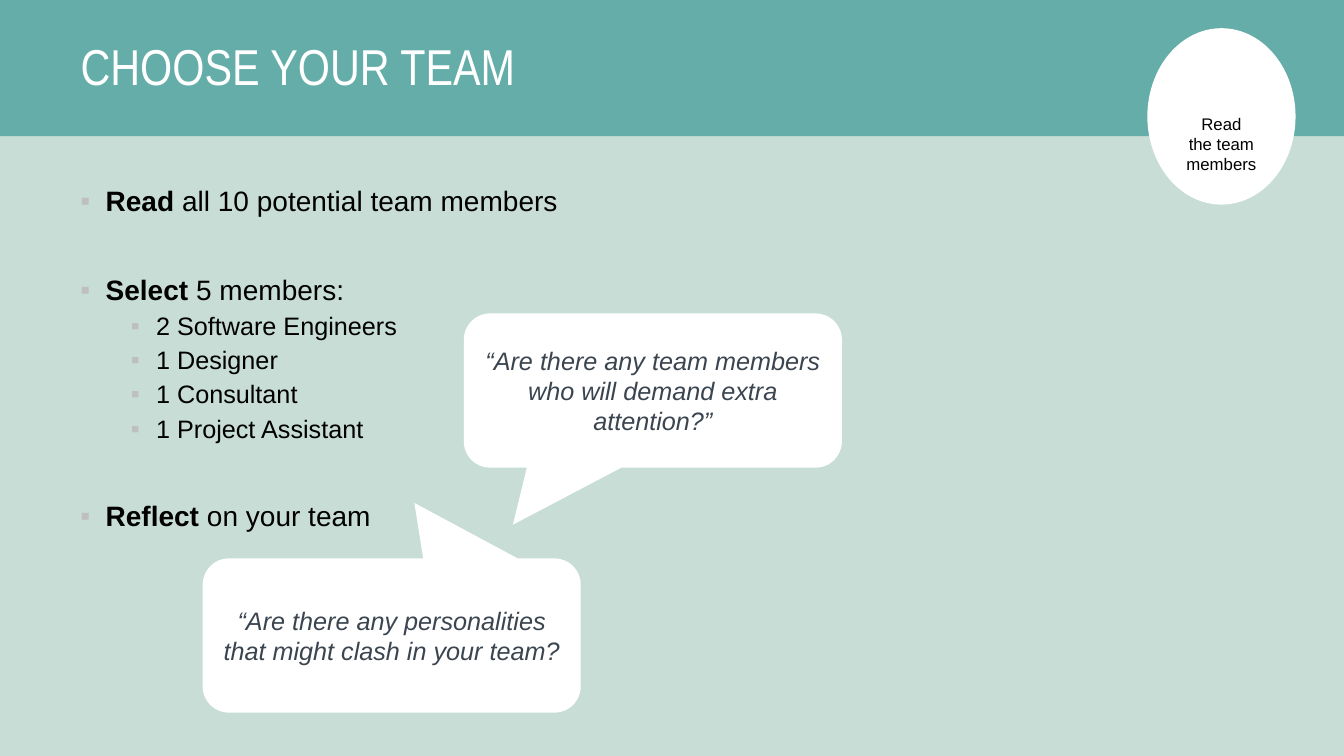
from dataclasses import dataclass
from typing import Any

from lxml import etree
from pptx import Presentation
from pptx.dml.color import RGBColor
from pptx.enum.shapes import MSO_SHAPE
from pptx.enum.text import MSO_ANCHOR, MSO_AUTO_SIZE, PP_ALIGN
from pptx.oxml.ns import qn
from pptx.util import Inches, Pt

RECTANGLE = MSO_SHAPE.RECTANGLE
OVAL = MSO_SHAPE.OVAL
CALLOUT = MSO_SHAPE.ROUNDED_RECTANGULAR_CALLOUT
MIDDLE, BOTTOM = MSO_ANCHOR.MIDDLE, MSO_ANCHOR.BOTTOM
LEFT, CENTER = PP_ALIGN.LEFT, PP_ALIGN.CENTER
NO_FIT = MSO_AUTO_SIZE.NONE
TITLE_ONLY = 5


@dataclass(frozen=True)
class Theme:
    background: str = "B6D4CD"
    panel: str = "C8DDD6"
    banner: str = "65ADA8"
    white: str = "FFFFFF"
    ink: str = "000000"
    quote: str = "3B4550"
    bullet: str = "BFBFBF"
    font: str = "Arial"
    title_font: str = "Arial Narrow"
    title_size: int = 36
    body_size: int = 20
    detail_size: int = 18
    badge_size: int = 12
    line_spacing: float = 0.9


@dataclass(frozen=True)
class Area:
    left: float
    top: float
    width: float
    height: float

    def lengths(self) -> tuple:
        return tuple(Inches(n) for n in (self.left, self.top, self.width, self.height))


@dataclass(frozen=True)
class Step:
    lead: str
    rest: str
    space_before: int = 0
    level: int = 0


@dataclass(frozen=True)
class Panel:
    kind: Any
    area: Area
    fill: str
    adjustments: tuple = ()
    text: str = ""
    size: int = 0
    color: str = ""
    italic: bool = False
    anchor: Any = MIDDLE


THEME = Theme()
SLIDE = Area(0, 0, 13.33, 7.5)
BANNER_HEIGHT = 1.35
TITLE_AREA = Area(0.7, 0.09, 11.92, 1.19)
STEPS_AREA = Area(0.7, 1.81, 8.36, 5.16)
SECTION_GAP = 42
DETAIL_GAP = 5
QUOTE_FORMAT = {"size": THEME.detail_size, "color": THEME.quote, "italic": True}

BANDS = (
    Panel(RECTANGLE, Area(0, BANNER_HEIGHT, SLIDE.width, SLIDE.height - BANNER_HEIGHT), THEME.panel),
    Panel(RECTANGLE, Area(0, 0, SLIDE.width, BANNER_HEIGHT), THEME.banner),
)
BUBBLES = (
    Panel(OVAL, Area(11.38, 0.28, 1.47, 1.75), THEME.white,
          text="Read\vthe team members", size=THEME.badge_size, color=THEME.ink, anchor=BOTTOM),
    Panel(CALLOUT, Area(2.01, 5.54, 3.75, 1.53), THEME.white, (0.06, -0.86, 0.17),
          "“Are there any personalities that might clash in your team?", **QUOTE_FORMAT),
    Panel(CALLOUT, Area(4.6, 3.11, 3.75, 1.53), THEME.white, (-0.37, 0.87, 0.17),
          "“Are there any team members who will demand extra attention?”", **QUOTE_FORMAT),
)
ROLES = ("2 Software Engineers", "1 Designer", "1 Consultant", "1 Project Assistant")
STEPS = (
    Step("Read", " all 10 potential team members"),
    Step("Select", " 5 members:", SECTION_GAP),
    *(Step("", role, DETAIL_GAP, 1) for role in ROLES),
    Step("Reflect", " on your team", SECTION_GAP),
)


def apply(target: Any, values: dict) -> None:
    for name, value in values.items():
        setattr(target, name, value)


def format_font(font: Any, size: int, color: str, **values: Any) -> None:
    apply(font, {"name": THEME.font, "size": Pt(size)} | values)
    font.color.rgb = RGBColor.from_string(color)


def add_panel(page: Any, panel: Panel) -> None:
    shape = page.shapes.add_shape(panel.kind, *panel.area.lengths())
    shape.shadow.inherit = False
    shape.fill.solid()
    shape.fill.fore_color.rgb = RGBColor.from_string(panel.fill)
    shape.line.fill.background()
    for index, value in enumerate(panel.adjustments):
        shape.adjustments[index] = value
    if panel.text:
        frame = shape.text_frame
        apply(frame, {"word_wrap": True, "vertical_anchor": panel.anchor, "text": panel.text})
        para = frame.paragraphs[0]
        para.alignment = CENTER
        for span in para.runs:
            format_font(span.font, panel.size, panel.color, italic=panel.italic)


def add_bullet(para: Any, indent: float) -> None:
    properties = para._p.get_or_add_pPr()
    properties.set("marL", str(Inches(indent)))
    properties.set("indent", str(Inches(-0.25)))
    bullet_color = etree.SubElement(properties, qn("a:buClr"))
    etree.SubElement(bullet_color, qn("a:srgbClr"), val=THEME.bullet)
    etree.SubElement(properties, qn("a:buFont"), typeface=THEME.font)
    etree.SubElement(properties, qn("a:buChar"), char="▪")


def add_steps(page: Any, steps: tuple) -> None:
    frame = page.shapes.add_textbox(*STEPS_AREA.lengths()).text_frame
    frame.word_wrap = True
    for index, step in enumerate(steps):
        para = frame.add_paragraph() if index else frame.paragraphs[0]
        add_bullet(para, 0.25 + 0.5 * step.level)
        apply(para, {"level": step.level, "line_spacing": THEME.line_spacing,
                     "space_before": Pt(step.space_before)})
        size = THEME.detail_size if step.level else THEME.body_size
        for text, bold in ((step.lead, True), (step.rest, False)):
            if text:
                span = para.add_run()
                span.text = text
                format_font(span.font, size, THEME.ink, bold=bold)


def place_title(page: Any, text: str) -> None:
    title = page.shapes.title
    left, top, width, height = TITLE_AREA.lengths()
    apply(title, {"left": left, "top": top, "width": width, "height": height})
    apply(title.text_frame, {"text": text, "word_wrap": True, "auto_size": NO_FIT,
                             "vertical_anchor": MIDDLE})
    para = title.text_frame.paragraphs[0]
    apply(para, {"alignment": LEFT, "line_spacing": THEME.line_spacing})
    format_font(para.runs[0].font, THEME.title_size, THEME.white, name=THEME.title_font)
    page.shapes._spTree.append(title._element)


def main() -> None:
    deck = Presentation()
    apply(deck, {"slide_width": Inches(SLIDE.width), "slide_height": Inches(SLIDE.height)})
    page = deck.slides.add_slide(deck.slide_layouts[TITLE_ONLY])
    page.background.fill.solid()
    page.background.fill.fore_color.rgb = RGBColor.from_string(THEME.background)
    for band in BANDS:
        add_panel(page, band)
    place_title(page, "CHOOSE YOUR TEAM")
    add_steps(page, STEPS)
    for bubble in BUBBLES:
        add_panel(page, bubble)
    deck.save("out.pptx")


if __name__ == "__main__":
    main()
